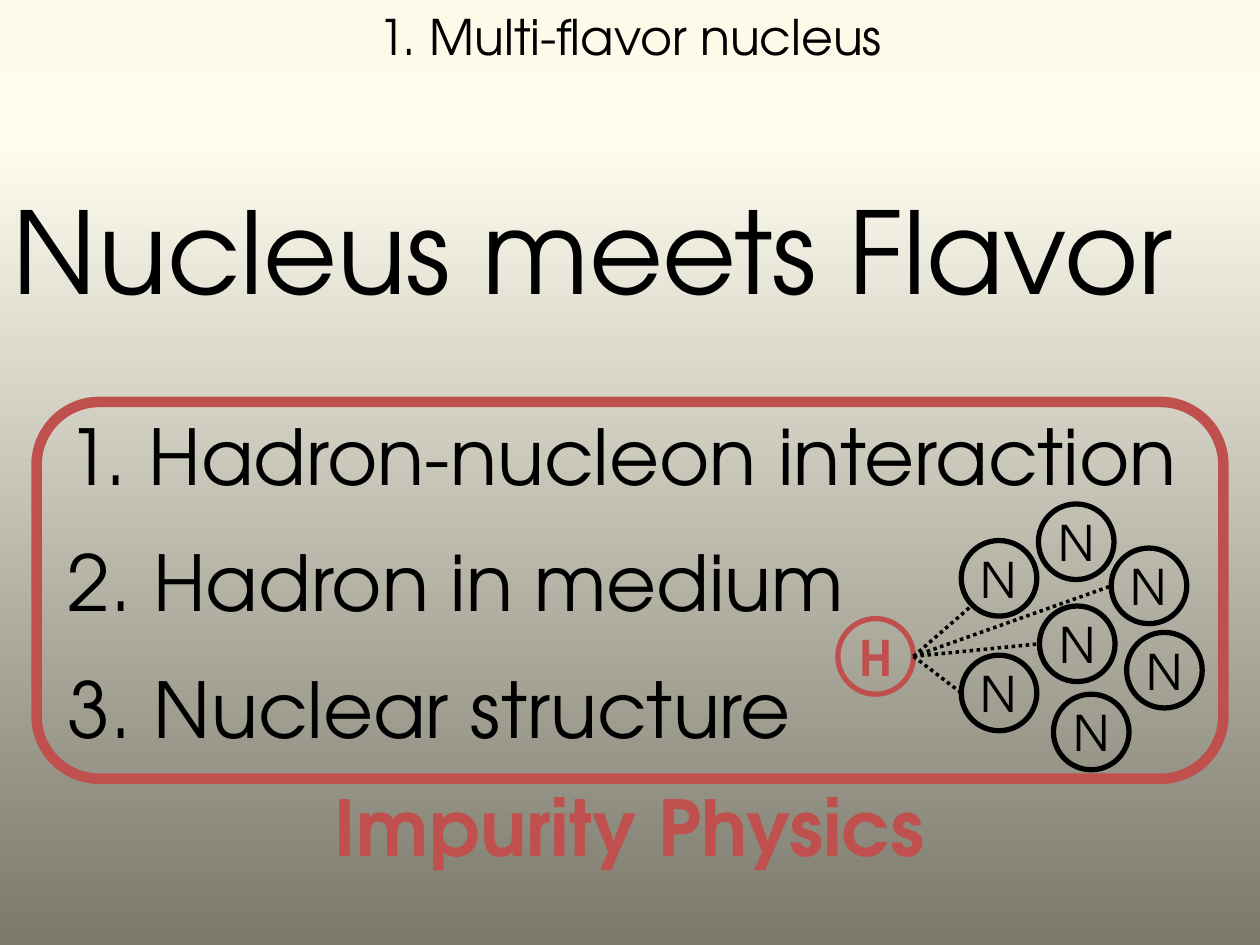
from copy import deepcopy
from dataclasses import dataclass

from lxml.etree import SubElement
from pptx import Presentation
from pptx.dml.color import RGBColor
from pptx.enum.dml import MSO_LINE as Dash
from pptx.enum.shapes import MSO_CONNECTOR as Connector, MSO_SHAPE as Shape
from pptx.enum.text import MSO_AUTO_SIZE as AutoSize, PP_ALIGN as Align
from pptx.oxml.ns import qn
from pptx.slide import Slide
from pptx.util import Pt

COLORS = {"ink": "000000", "accent": "C0504D",
          "shade": "7B796B", "cream": "FEFCEE", "ivory": "FDFAEA"}


@dataclass
class SlideStyle:
    """Style and drawing methods for the current slide."""

    slide: Slide
    font: str = "TeX Gyre Adventor"
    circle: float = 43.2

    def color(self, name):
        return RGBColor.from_string(COLORS[name])

    def background(self, stops):
        fill = self.slide.background.fill
        fill.gradient()
        fill.gradient_angle = 90
        stop_list = self.slide.element.find(".//" + qn("a:gsLst"))
        stop_list.append(deepcopy(stop_list[-1]))
        for stop, (position, name) in zip(fill.gradient_stops, stops):
            stop.color.rgb = self.color(name)
            stop.position = position

    def group(self):
        return self.slide.shapes.add_group_shape().shapes

    def text(self, words, left, top, width, height, size, color="ink",
             bold=False, align=Align.LEFT, wrap=True, canvas=None):
        canvas = canvas or self.slide.shapes
        frame = canvas.add_textbox(Pt(left), Pt(top), Pt(width), Pt(height)).text_frame
        frame.word_wrap = wrap
        frame.auto_size = AutoSize.SHAPE_TO_FIT_TEXT
        paragraph = frame.paragraphs[0]
        paragraph.alignment = align
        run = paragraph.add_run()
        run.text = words
        run.font.name = self.font
        run.font.size = Pt(size)
        run.font.bold = bold
        run.font.color.rgb = self.color(color)

    def outline(self, preset, left, top, width, height, color, weight, canvas=None):
        canvas = canvas or self.slide.shapes
        shape = canvas.add_shape(preset, Pt(left), Pt(top), Pt(width), Pt(height))
        shape.shadow.inherit = False
        shape.fill.background()
        shape.line.color.rgb = self.color(color)
        shape.line.width = Pt(weight)

    def particle(self, symbol, left, top, color="ink", bold=False):
        canvas = self.group()
        label_width = 35.2
        self.text(symbol, left + (self.circle - label_width) / 2, top + 1.4,
                  label_width, 41, 28, color, bold, Align.CENTER, False, canvas)
        self.outline(Shape.OVAL, left, top, self.circle, self.circle, color, 3, canvas)

    def dotted_line(self, canvas, start, end):
        line = canvas.add_connector(Connector.STRAIGHT, *map(Pt, start + end))
        line.line.color.rgb = self.color("ink")
        line.line.width = Pt(2)
        line.line.dash_style = Dash.ROUND_DOT
        SubElement(line._element.spPr, qn("a:effectLst"))


def main():
    deck = Presentation()
    deck.slide_width, deck.slide_height = Pt(720), Pt(540)
    style = SlideStyle(deck.slides.add_slide(deck.slide_layouts[6]))
    style.background([(0, "shade"), (0.85, "cream"), (1, "ivory")])

    style.text("1. Multi-flavor nucleus", 205.7, 0, 309, 41, 28,
               align=Align.CENTER, wrap=False)
    style.text("Nucleus meets Flavor", 0, 100, 720, 85.7, 65)
    topics = ["1. Hadron-nucleon interaction", "2. Hadron in medium",
              "3. Nuclear structure"]
    for row, topic in enumerate(topics):
        style.text(topic, 31.7, 229.8 + 72.4 * row, 656.6, 60.5, 44)
    style.outline(Shape.ROUNDED_RECTANGLE, 20.9, 229.7, 678.2, 215.3, "accent", 6)
    style.text("Impurity Physics", 183.6, 442.1, 352.8, 60.5, 44,
               "accent", True, Align.CENTER)

    nucleons = [(549.3, 308.9), (593.4, 288), (549.3, 374.4), (643.8, 361.4),
                (602, 396.7), (594, 346.3), (635, 313.2)]
    for left, top in nucleons:
        style.particle("N", left, top)
    style.particle("H", 478.8, 353.5, "accent", True)

    interactions = style.group()
    for target in [(555.8, 345.6), (594, 367.9), (549.4, 396), (635, 334.8)]:
        style.dotted_line(interactions, (522, 375.1), target)

    deck.save("out.pptx")


if __name__ == "__main__":
    main()
